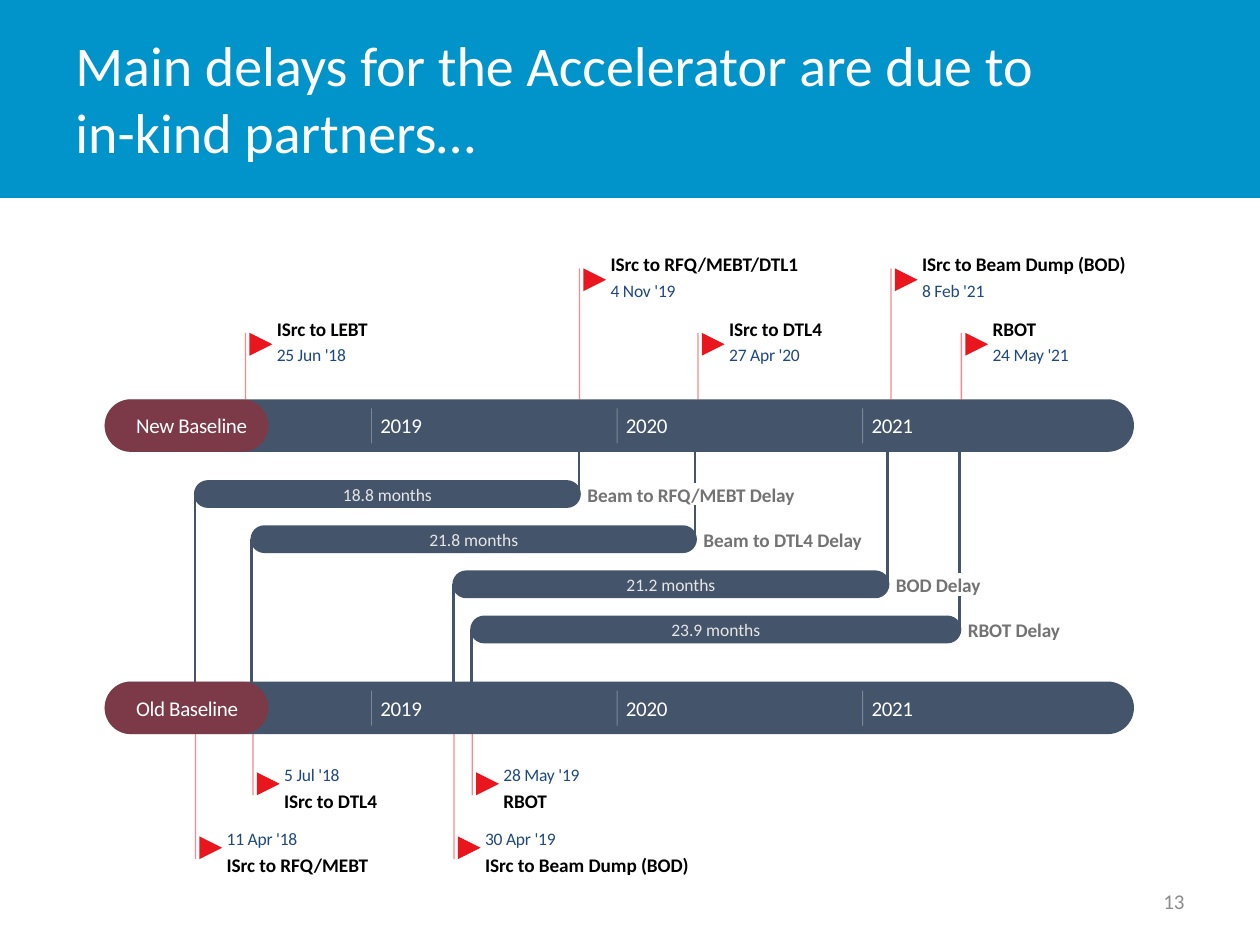
from dataclasses import dataclass
from lxml.etree import SubElement
from pptx import Presentation
from pptx.dml.color import RGBColor
from pptx.enum.shapes import MSO_CONNECTOR, MSO_SHAPE
from pptx.enum.text import MSO_ANCHOR, PP_ALIGN
from pptx.oxml.ns import qn
from pptx.util import Cm, Pt


@dataclass
class Theme:
    font: str = "Calibri"
    sky: str = "0094CA"
    slate: str = "44546A"
    red: str = "EA161E"
    cap: str = "FF0000"
    navy: str = "1F497E"
    gray: str = "737373"
    page: str = "8C8C8C"
    pale: str = "E7E6E6"
    white: str = "FFFFFF"
    black: str = "000000"
    head: int = 32
    body: int = 12
    name: int = 11
    small: int = 10


look = Theme()
deck = Presentation()
deck.slide_width, deck.slide_height = Cm(25.4), Cm(19.05)
slide = deck.slides.add_slide(deck.slide_layouts[6])
shapes = slide.shapes


def write(text, box=None, shape=None, size=look.body, color=look.white, bold=False,
          align=PP_ALIGN.LEFT, pad=(0, 0, 0, 0), space=0):
    shape = shape or shapes.add_textbox(*map(Cm, box))
    frame = shape.text_frame
    frame.word_wrap = True
    frame.vertical_anchor = MSO_ANCHOR.MIDDLE
    frame.margin_left, frame.margin_top, frame.margin_right, frame.margin_bottom = map(Cm, pad)
    para = frame.paragraphs[0]
    para.alignment = align
    run = para.add_run()
    run.text = text
    run.font.name, run.font.size, run.font.bold = look.font, Pt(size), bold
    run.font.color.rgb = RGBColor.from_string(color)
    if space:
        run.font._element.set("spc", str(space))


def draw(kind, box, color, width=0, alpha=100):
    if width:
        item = shapes.add_connector(MSO_CONNECTOR.STRAIGHT, *map(Cm, box))
        item.line.width = Pt(width)
        item.line.color.rgb = RGBColor.from_string(color)
        SubElement(item._element.spPr, qn("a:effectLst"))
    else:
        item = shapes.add_shape(kind, *map(Cm, box))
        item.fill.solid()
        item.fill.fore_color.rgb = RGBColor.from_string(color)
        item.line.fill.background()
        item.shadow.inherit = False
        if kind == MSO_SHAPE.ROUNDED_RECTANGLE:
            item.adjustments[0] = 0.5
    if alpha < 100:
        tint = item._element.spPr.find(".//" + qn("a:srgbClr"))
        SubElement(tint, qn("a:alpha")).set("val", str(alpha * 1000))
    return item


draw(MSO_SHAPE.RECTANGLE, (0, 0, 25.4, 3.99), look.sky)
write("Main delays for the Accelerator are due to in-kind partners…",
      box=(1.27, 0, 19.84, 3.94), size=look.head, pad=(0.25, 0.13, 0.25, 0.13))
write("13", box=(18.21, 17.65, 5.92, 1.02), color=look.page,
      align=PP_ALIGN.RIGHT, pad=(0.25, 0.13, 0.25, 0.13))

new, old, high = 8.05, 13.74, 1.06
first, step, thick = 9.68, 0.91, 0.56
delays = [
    (3.91, 11.71, "18.8 months", "Beam to RFQ/MEBT Delay"),
    (5.05, 14.05, "21.8 months", "Beam to DTL4 Delay"),
    (9.12, 17.93, "21.2 months", "BOD Delay"),
    (9.48, 19.38, "23.9 months", "RBOT Delay"),
]

for row, (left, right, span, label) in enumerate(delays):
    mid = first + row * step + thick / 2
    stem = right - 0.04
    top = new + high
    if row % 2:
        gap = mid - step
        draw(None, (stem, top, stem, gap - 0.23), look.slate, width=1.5)
        top = gap + 0.23
    draw(None, (stem, top, stem, mid), look.slate, width=1.5)
    draw(None, (left + 0.02, mid, left + 0.02, old), look.slate, width=1.5)

for row, (left, right, span, label) in enumerate(delays):
    top = first + row * step
    bar = draw(MSO_SHAPE.ROUNDED_RECTANGLE, (left, top, right - left, thick), look.slate)
    write(span, shape=bar, size=look.small, color=look.pale, align=PP_ALIGN.CENTER)
    write(label, box=(right + 0.13, top + 0.05, 4.4, 0.48), size=look.name,
          color=look.gray, bold=True, space=-5)

upper = [
    (4.95, 6.71, "ISrc to LEBT", "25 Jun '18"),
    (11.68, 5.41, "ISrc to RFQ/MEBT/DTL1", "4 Nov '19"),
    (14.07, 6.71, "ISrc to DTL4", "27 Apr '20"),
    (17.96, 5.41, "ISrc to Beam Dump (BOD)", "8 Feb '21"),
    (19.38, 6.71, "RBOT", "24 May '21"),
]
lower = [
    (3.94, 17.32, "ISrc to RFQ/MEBT", "11 Apr '18"),
    (5.1, 16.03, "ISrc to DTL4", "5 Jul '18"),
    (9.15, 17.32, "ISrc to Beam Dump (BOD)", "30 Apr '19"),
    (9.52, 16.03, "RBOT", "28 May '19"),
]
sides = [(upper, new, 0, -0.33, 0.23), (lower, old + high, -0.46, -0.13, -0.64)]

for marks, base, lift, name_dy, date_dy in sides:
    for left, end, name, date in marks:
        draw(None, (left, end, left, base), look.red, width=0.75, alpha=50)
        flag = draw(MSO_SHAPE.FLOWCHART_MERGE, (left + 0.08, end + lift, 0.46, 0.46), look.red)
        flag.rotation = 270
        write(name, box=(left + 0.63, end + name_dy, 4.4, 0.48), size=look.name,
              color=look.black, bold=True, space=-5)
        write(date, box=(left + 0.63, end + date_dy, 2, 0.43), size=look.small,
              color=look.navy, space=-10)

for top, title in [(new, "New Baseline"), (old, "Old Baseline")]:
    draw(MSO_SHAPE.ROUNDED_RECTANGLE, (2.11, top, 20.75, high), look.slate)
    cap = draw(MSO_SHAPE.ROUNDED_RECTANGLE, (2.11, top, 3.3, high), look.cap, alpha=30)
    write(title, shape=cap, pad=(0.48, 0, 0, 0), space=-20)
    for turn, year in enumerate(("2019", "2020", "2021")):
        left = 7.49 + turn * 4.95
        draw(None, (left, top + 0.18, left, top + 0.89), look.white, width=0.5, alpha=30)
        write(year, box=(left + 0.18, top, 1.5, high), space=-20)

deck.save("out.pptx")
